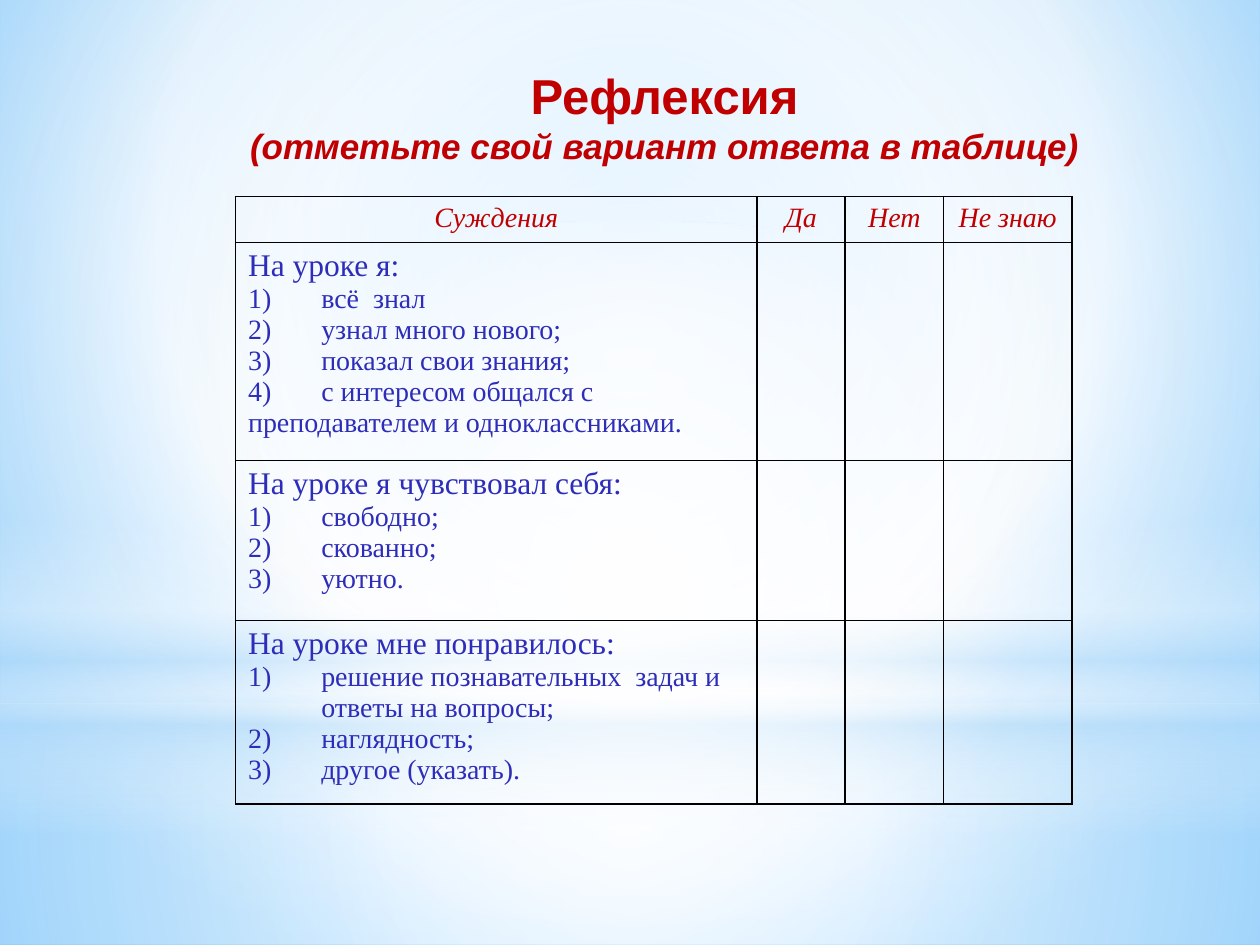
import pptx
import pptx.dml.color
import pptx.enum.shapes
import pptx.enum.text
import pptx.oxml
import pptx.oxml.ns
import pptx.util

Pt = pptx.util.Pt
RGBColor = pptx.dml.color.RGBColor
CENTER = pptx.enum.text.PP_ALIGN.CENTER
SHAPES = pptx.enum.shapes.MSO_SHAPE
qn = pptx.oxml.ns.qn
NS = pptx.oxml.ns.nsdecls("a")

WHITE = RGBColor(0xFF, 0xFF, 0xFF)
HAZE = RGBColor(0xB4, 0xDC, 0xFA)
SKY = RGBColor(0x9E, 0xD5, 0xFF)
AZURE = RGBColor(0x5B, 0xB9, 0xFF)
RED = RGBColor(0xC0, 0x00, 0x00)
INDIGO = RGBColor(0x2D, 0x2D, 0xB9)
BLACK = RGBColor(0x00, 0x00, 0x00)

WIDTH, HEIGHT = 720, 540
COLUMN_WIDTHS = [298, 50.4, 56.2, 73.4]
ROW_HEIGHTS = [26.2, 124.6, 91.4, 105.1, 28.8]
ITEM_INDENT = 41.8

HEADINGS = ["Суждения", "Да", "Нет", "Не знаю"]
STATEMENTS = [
    ("На уроке я:",
     ["всё  знал", "узнал много нового;", "показал свои знания;",
      "с интересом общался с"],
     "преподавателем и одноклассниками."),
    ("На уроке я чувствовал себя:",
     ["свободно;", "скованно;", "уютно."], None),
    ("На уроке мне понравилось:",
     ["решение познавательных  задач и ответы на вопросы;",
      "наглядность;", "другое (указать)."], None),
]


def set_gradient(fill, holder, stops, focus=None):
    stop_xml = "".join(
        f'<a:gs pos="{pos * 1000}"><a:srgbClr val="{color}">'
        f'<a:alpha val="{alpha * 1000}"/></a:srgbClr></a:gs>'
        for pos, color, alpha in stops)
    if focus:
        left, top, right, bottom = (side * 1000 for side in focus)
        direction = (f'<a:path path="circle"><a:fillToRect l="{left}" t="{top}" '
                     f'r="{right}" b="{bottom}"/></a:path>')
    else:
        direction = '<a:lin ang="5400000" scaled="0"/>'
    fill.solid()
    gradient = pptx.oxml.parse_xml(
        f'<a:gradFill {NS} rotWithShape="1"><a:gsLst>{stop_xml}</a:gsLst>'
        f'{direction}</a:gradFill>')
    holder.replace(holder.find(qn("a:solidFill")), gradient)


def add_glow(slide, preset, box, stops, focus=None):
    glow = slide.shapes.add_shape(preset, *map(Pt, box))
    glow.shadow.inherit = False
    glow.line.fill.background()
    set_gradient(glow.fill, glow._element.spPr, stops, focus)


def add_backdrop(slide, width, height):
    background_fill = slide.background.fill
    background_fill.solid()
    set_gradient(background_fill, slide._element.cSld.bg.bgPr,
                 [(0, SKY, 100), (60, WHITE, 100), (100, AZURE, 100)],
                 (20, 10, 20, 60))
    horizon = 401.8
    middle = (50, 50, 50, 50)
    add_glow(slide, SHAPES.RECTANGLE, (0, horizon, width, height - horizon),
             [(0, WHITE, 91), (37, WHITE, 76), (100, HAZE, 79)], middle)
    add_glow(slide, SHAPES.RECTANGLE, (0, 0, width, horizon),
             [(0, WHITE, 89), (48, WHITE, 62), (100, HAZE, 79)], middle)
    add_glow(slide, SHAPES.RECTANGLE, (0, 296.6, width, 180),
             [(0, WHITE, 0), (29, WHITE, 30), (45, HAZE, 40),
              (55, WHITE, 26), (65, HAZE, 60), (100, WHITE, 0)])
    add_glow(slide, SHAPES.OVAL, (0, 126, width, horizon),
             [(0, WHITE, 100), (56, WHITE, 0)], middle)


def add_text(paragraph, text, size, font, color, bold=False, italic=False):
    run = paragraph.add_run()
    run.text = text
    run.font.size = Pt(size)
    run.font.name = font
    run.font.color.rgb = color
    run.font.bold = bold
    run.font.italic = italic


def place_title(slide, left, top, width, height):
    title = slide.shapes.title
    slide.shapes._spTree.append(title._element)
    title.left, title.top, title.width, title.height = map(
        Pt, (left, top, width, height))
    frame = title.text_frame
    frame.word_wrap = False
    frame.auto_size = pptx.enum.text.MSO_AUTO_SIZE.NONE
    frame.vertical_anchor = pptx.enum.text.MSO_ANCHOR.TOP
    heading, instruction = frame.paragraphs[0], frame.add_paragraph()
    heading.alignment = instruction.alignment = CENTER
    add_text(heading, "Рефлексия", 28, "Arial", RED, bold=True)
    add_text(instruction, "(отметьте свой вариант ответа в таблице)",
             20, "Arial", RED, bold=True, italic=True)


def set_borders(cell, visible_sides):
    properties = cell._tc.get_or_add_tcPr()
    for position, side in enumerate("LRTB"):
        paint = (f'<a:solidFill><a:srgbClr val="{BLACK}"/></a:solidFill>'
                 if side in visible_sides else "<a:noFill/>")
        properties.insert(position, pptx.oxml.parse_xml(
            f'<a:ln{side} {NS} w="{Pt(1)}">{paint}</a:ln{side}>'))


def fill_statement(cell, opening, items, ending):
    lines = [(opening, 18, False)] + [(item, 16, True) for item in items]
    if ending:
        lines.append((ending, 16, False))
    frame = cell.text_frame
    for index, (text, size, numbered) in enumerate(lines):
        paragraph = frame.add_paragraph() if index else frame.paragraphs[0]
        properties = paragraph._p.get_or_add_pPr()
        properties.set("marL", str(Pt(ITEM_INDENT)))
        properties.set("indent", str(-Pt(ITEM_INDENT)))
        marker = '<a:buAutoNum {} type="arabicParenR"/>' if numbered else "<a:buNone {}/>"
        properties.append(pptx.oxml.parse_xml(marker.format(NS)))
        add_text(paragraph, text, size, "Times New Roman", INDIGO)


def add_survey(slide, left, top):
    survey = slide.shapes.add_table(
        len(ROW_HEIGHTS), len(COLUMN_WIDTHS), Pt(left), Pt(top),
        Pt(sum(COLUMN_WIDTHS)), Pt(sum(ROW_HEIGHTS))).table
    survey.first_row = survey.horz_banding = False
    for column, width in zip(survey.columns, COLUMN_WIDTHS):
        column.width = Pt(width)
    last_row = len(ROW_HEIGHTS) - 1
    for index, (row, height) in enumerate(zip(survey.rows, ROW_HEIGHTS)):
        row.height = Pt(height)
        for cell in row.cells:
            cell.fill.background()
            set_borders(cell, "T" if index == last_row else "LRTB")
    for column, heading in enumerate(HEADINGS):
        paragraph = survey.cell(0, column).text_frame.paragraphs[0]
        paragraph.alignment = CENTER
        add_text(paragraph, heading, 16, "Times New Roman", RED, italic=True)
    for row, statement in enumerate(STATEMENTS, 1):
        fill_statement(survey.cell(row, 0), *statement)
    survey.cell(last_row, 0).merge(survey.cell(last_row, len(HEADINGS) - 1))


def main():
    presentation = pptx.Presentation()
    presentation.slide_width, presentation.slide_height = Pt(WIDTH), Pt(HEIGHT)
    slide = presentation.slides.add_slide(presentation.slide_layouts[5])
    add_backdrop(slide, WIDTH, HEIGHT)
    place_title(slide, 134.6, 33.8, 490.3, 64.8)
    add_survey(slide, 134.6, 112.3)
    presentation.save("out.pptx")


if __name__ == "__main__":
    main()
